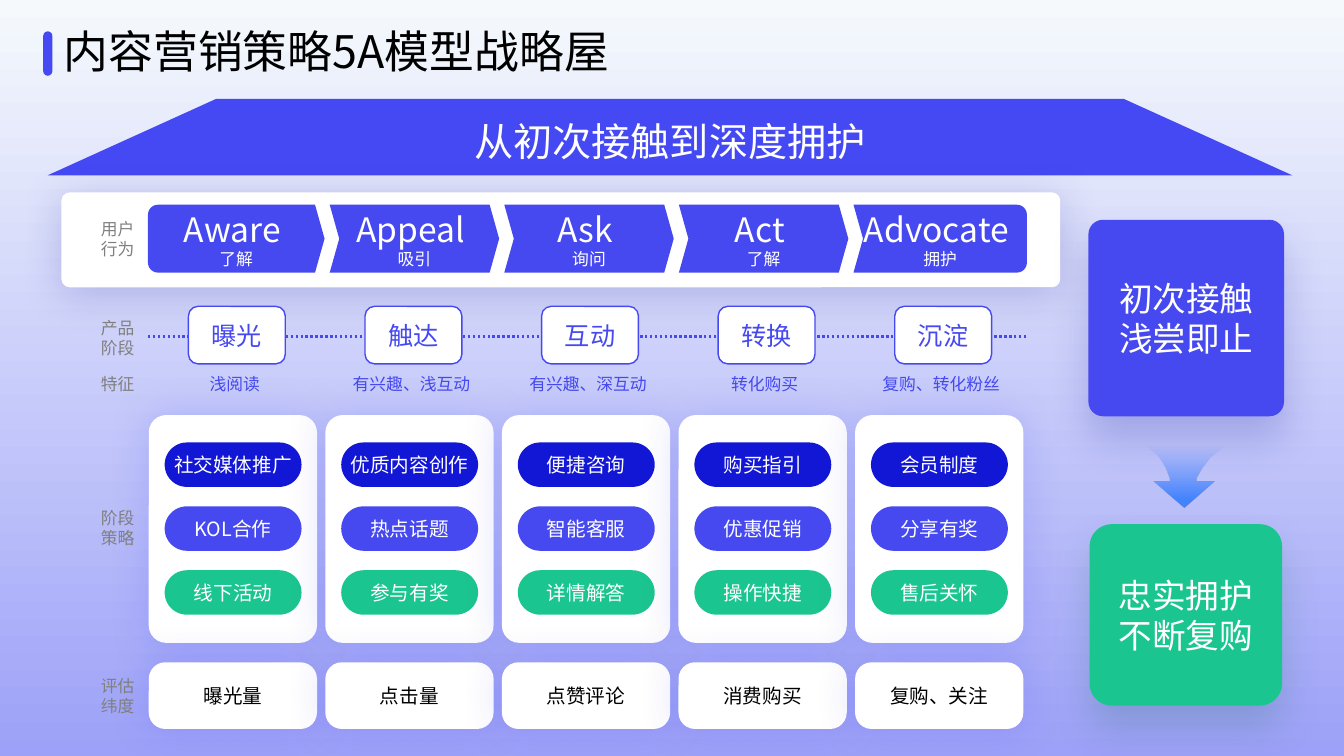
from math import cos, radians, sin

from lxml.etree import SubElement
from pptx import Presentation
from pptx.dml.color import RGBColor
from pptx.enum.dml import MSO_LINE
from pptx.enum.shapes import MSO_CONNECTOR, MSO_SHAPE
from pptx.enum.text import MSO_ANCHOR, PP_ALIGN
from pptx.oxml.ns import qn
from pptx.util import Cm, Pt

# Content
TITLE = "内容营销策略5A模型战略屋"
ROOF = "从初次接触到深度拥护"
STEPS = [  # behaviour, translation, stage, feature, strategies, metric
    ("Aware ", "了解", "曝光", "浅阅读", ("社交媒体推广", "KOL合作", "线下活动"), "曝光量"),
    ("Appeal ", "吸引", "触达", "有兴趣、浅互动", ("优质内容创作", "热点话题", "参与有奖"), "点击量"),
    ("Ask ", "询问", "互动", "有兴趣、深互动", ("便捷咨询", "智能客服", "详情解答"), "点赞评论"),
    ("Act ", "了解", "转换", "转化购买", ("购买指引", "优惠促销", "操作快捷"), "消费购买"),
    ("Advocate ", "拥护", "沉淀", "复购、转化粉丝", ("会员制度", "分享有奖", "售后关怀"), "复购、关注"),
]
ROW_LABELS = [  # lines, top
    (("用户", "行为"), 5.38),
    (("产品", "阶段"), 7.87),
    (("特征",), 9.3),
    (("阶段", "策略"), 12.67),
    (("评估", "纬度"), 16.89),
]
OUTCOMES = [  # lines, box, corner, fill, shadow colour
    (("初次接触", "浅尝即止"), (27.43, 5.54, 4.93, 4.95), 0.074, "blue", "navy"),
    (("忠实拥护", "不断复购"), (27.46, 13.21, 4.85, 4.57), 0.122, "green", "forest"),
]
ARROW = [
    (29.85, 12.78), (29.08, 12.12), (29.49, 12.12), (29.49, 12.06), (29.39, 11.79),
    (29.2, 11.5), (28.96, 11.3), (28.85, 11.23), (30.91, 11.23), (30.76, 11.33),
    (30.5, 11.54), (30.3, 11.79), (30.18, 12), (30.15, 12.06), (30.15, 12.12),
    (30.61, 12.12),
]
COLOURS = {
    "blue": "4649EF", "bright": "4449F4", "deep": "1216D5", "green": "1BC58F",
    "navy": "0C0F8E", "forest": "0D6248", "white": "FFFFFF", "black": "000000",
    "grey": "808080", "sky": "F5F9FC", "lilac": "9DA1F8", "arrow": "4484FE",
}
FONT = "Noto Sans CJK SC"

# Grid, in centimetres
COLUMN_LEFT, COLUMN_PITCH, CARD_WIDTH = 3.75, 4.45, 4.24
PILL_TOP, PILL_PITCH = 11.15, 1.61
BAND_LEFT, BAND_RIGHT, BAND_TOP, BAND_HEIGHT = 3.73, 25.88, 5.16, 1.71
CHEVRON_LEFT, CHEVRON_RIGHT, CHEVRON_PITCH = 3.91, 8.18, 4.4
NOTCH, RADIUS = 0.24, 0.25

presentation = Presentation()
presentation.slide_width, presentation.slide_height = Cm(33.87), Cm(19.05)
slide = presentation.slides.add_slide(presentation.slide_layouts[5])
shapes = slide.shapes


def colour(name):
    return RGBColor.from_string(COLOURS[name])


def write(shape, lines, sizes, ink, align=PP_ALIGN.CENTER, **frame_format):
    frame = shape.text_frame
    frame_values = {"word_wrap": True, "vertical_anchor": MSO_ANCHOR.MIDDLE}
    for name, value in {**frame_values, **frame_format}.items():
        setattr(frame, name, value)
    for index, line in enumerate(lines):
        paragraph = frame.paragraphs[0] if index == 0 else frame.add_paragraph()
        paragraph.alignment = align
        run = paragraph.add_run()
        run.text = line
        run.font.color.rgb = colour(ink)
        values = {"name": FONT, "size": Pt(sizes[min(index, len(sizes) - 1)])}
        for name, value in values.items():
            setattr(run.font, name, value)
        SubElement(run.font._element, qn("a:ea"), typeface=FONT)


def paint(shape, fill, line=None):
    shape.shadow.inherit = False
    if fill:
        shape.fill.solid()
        shape.fill.fore_color.rgb = colour(fill)
    if line:
        shape.line.color.rgb = colour(line)
        shape.line.width = Pt(1)
    else:
        shape.line.fill.background()


def add_box(box, fill, corner=0.1667, line=None, kind=MSO_SHAPE.ROUNDED_RECTANGLE):
    shape = shapes.add_shape(kind, *map(Cm, box))
    shape.adjustments[0] = corner
    paint(shape, fill, line)
    return shape


def add_shadow(shape, name, alpha, blur, distance):
    effects = shape._element.spPr.find(qn("a:effectLst"))
    shadow = SubElement(effects, qn("a:outerShdw"), blurRad=str(Pt(blur)),
                        dist=str(Pt(distance)), dir="5400000", rotWithShape="0")
    tint = SubElement(shadow, qn("a:srgbClr"), val=COLOURS[name])
    SubElement(tint, qn("a:alpha"), val=str(alpha * 1000))


def add_outline(points, fill):
    points = [(Cm(x), Cm(y)) for x, y in points]
    builder = shapes.build_freeform(*points[0], scale=1.0)
    builder.add_line_segments(points[1:], close=True)
    shape = builder.convert_to_shape()
    paint(shape, fill)
    return shape


def set_gradient(fill, stops):
    fill.gradient()
    fill.gradient_angle = 270
    for stop, (position, name) in zip(fill.gradient_stops, stops):
        stop.position = position
        stop.color.rgb = colour(name)


def corner_arc(x, y, start):
    angles = [radians(start + step * 15) for step in range(7)]
    return [(x + RADIUS * cos(a), y + RADIUS * sin(a)) for a in angles]


def band_outline(index):
    top, bottom = BAND_TOP, BAND_TOP + BAND_HEIGHT
    middle = (top + bottom) / 2
    left = CHEVRON_LEFT + index * CHEVRON_PITCH
    right = CHEVRON_RIGHT + index * CHEVRON_PITCH
    tail = [(left, bottom), (left + NOTCH, middle), (left, top)]
    head = [(right - NOTCH, top), (right, middle), (right - NOTCH, bottom)]
    if index == 0:
        x = BAND_LEFT + RADIUS
        tail = corner_arc(x, bottom - RADIUS, 90) + corner_arc(x, top + RADIUS, 180)
    if index == len(STEPS) - 1:
        x = BAND_RIGHT - RADIUS
        head = corner_arc(x, top + RADIUS, 270) + corner_arc(x, bottom - RADIUS, 0)
    return tail + head


# Background and title
set_gradient(slide.background.fill, [(0, "sky"), (1, "lilac")])
title = shapes.title
title.left, title.top, title.width, title.height = map(Cm, (1.35, 0.46, 14.38, 1.63))
write(title, [TITLE], [32], "black", PP_ALIGN.LEFT, vertical_anchor=MSO_ANCHOR.TOP)
add_box((1.09, 0.79, 0.23, 1.12), "bright", 0.5)

# Roof
roof = add_box((1.2, 2.49, 31.37, 1.93), "bright", 2.204, kind=MSO_SHAPE.TRAPEZOID)
write(roof, [ROOF], [28], "white")

# Behaviour panel and dotted stage line
panel = add_box((1.55, 4.85, 25.17, 2.39), "white", 0.085)
add_shadow(panel, "navy", 18, 29, 4)
stage_line = shapes.add_connector(
    MSO_CONNECTOR.STRAIGHT, Cm(BAND_LEFT), Cm(8.48), Cm(BAND_RIGHT), Cm(8.48))
stage_line.line.color.rgb = colour("blue")
stage_line.line.width = Pt(1.75)
stage_line.line.dash_style = MSO_LINE.ROUND_DOT
SubElement(stage_line._element.spPr, qn("a:effectLst"))

# Row labels
for lines, top in ROW_LABELS:
    label = shapes.add_textbox(Cm(2.29), Cm(top), Cm(1.37), Cm(0.25 + 0.51 * len(lines)))
    write(label, lines, [12], "grey", PP_ALIGN.LEFT, word_wrap=False)

# One column per step
for index, (name, meaning, stage, feature, strategies, metric) in enumerate(STEPS):
    left = COLUMN_LEFT + index * COLUMN_PITCH
    write(add_outline(band_outline(index), "blue"), [name, meaning], [24, 12], "white")
    write(add_box((left + 1, 7.72, 2.44, 1.45), "white", line="blue"), [stage], [18], "blue")
    label = shapes.add_textbox(Cm(left + 0.42), Cm(9.3), Cm(3.5), Cm(0.76))
    write(label, [feature], [12], "blue", word_wrap=False)
    card = add_box((left, 10.46, CARD_WIDTH, 5.74), "white", 0.103)
    add_shadow(card, "blue", 20, 30, 0)
    for row, (strategy, fill) in enumerate(zip(strategies, ("deep", "blue", "green"))):
        pill = add_box((left + 0.4, PILL_TOP + row * PILL_PITCH, 3.45, 1.12), fill, 0.5)
        write(pill, [strategy], [14], "white", word_wrap=False)
    measure = add_box((left, 16.69, CARD_WIDTH, 1.68), "white", 0.247)
    add_shadow(measure, "blue", 20, 30, 0)
    write(measure, [metric], [14], "black")

# Outcomes joined by a fading arrow
for lines, box, corner, fill, shade in OUTCOMES:
    outcome = add_box(box, fill, corner)
    add_shadow(outcome, shade, 18, 29, 16)
    write(outcome, lines, [24], "white")
arrow = add_outline(ARROW, None)
set_gradient(arrow.fill, [(0, "arrow"), (0.87, "arrow")])
faded = next(arrow._element.spPr.iter(qn("a:srgbClr")))
SubElement(faded, qn("a:alpha"), val="0")

presentation.save("out.pptx")
